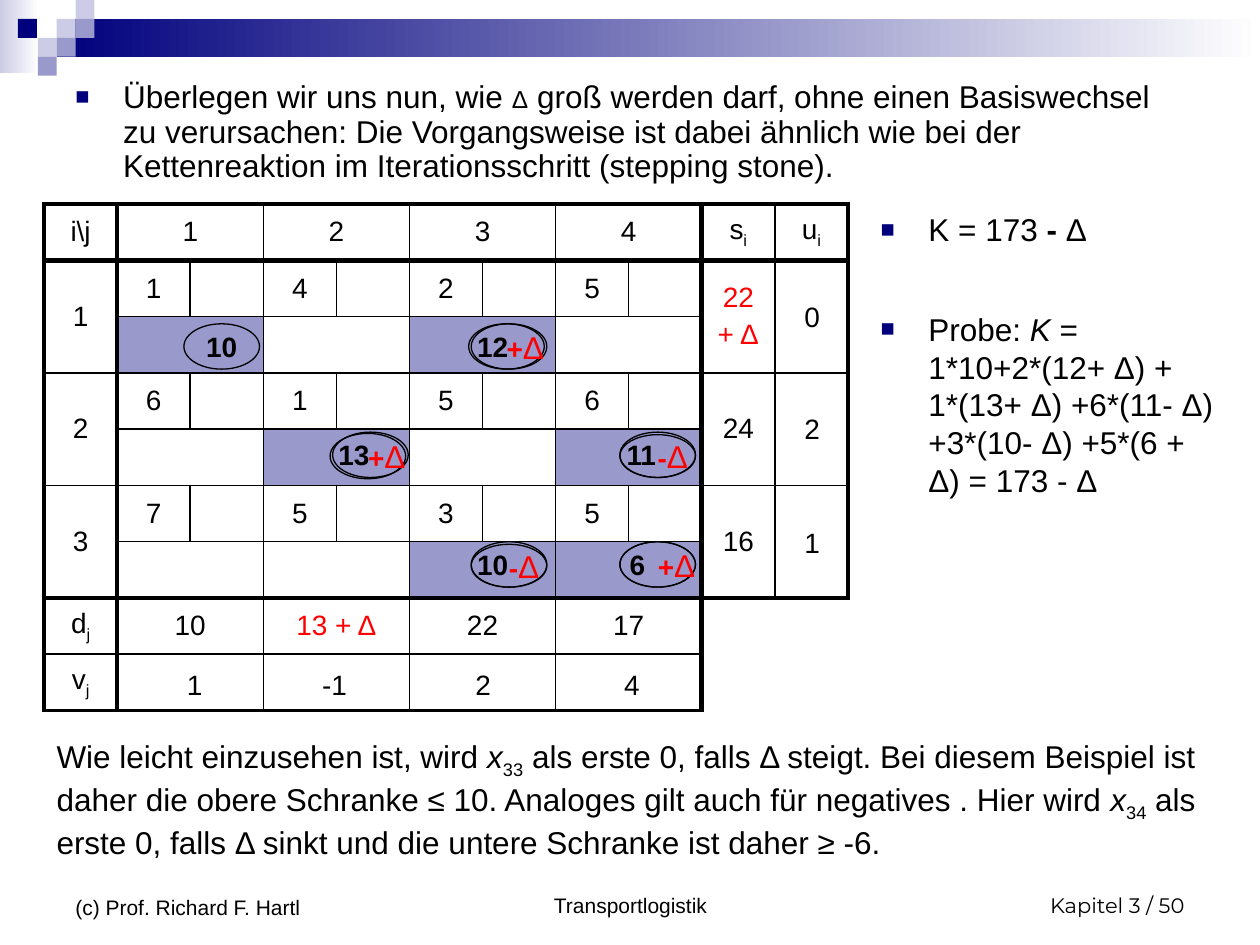
from lxml import etree
from pptx import Presentation
from pptx import util as u
from pptx.dml import color
from pptx.enum import shapes, text
from pptx.oxml import ns

BLACK, RED, NAVY, LILAC, PALE = "000000", "FF0000", "00007D", "9999CC", "CCCCE6"
CENTER, MIDDLE = text.PP_ALIGN.CENTER, text.MSO_ANCHOR.MIDDLE
SUB, ITALIC = {"baseline": -25000}, {"italic": True}
LABELS = {
    (0, 0): "i\\j", (0, 9): [("s", {}), ("i", SUB)], (0, 10): [("u", {}), ("i", SUB)],
    (7, 0): [("d", {}), ("j", SUB)], (8, 0): [("v", {}), ("j", SUB)],
    (3, 9): "24", (5, 9): "16",
}
COSTS = [[1, 4, 2, 5], [6, 1, 5, 6], [7, 5, 3, 5]]
DEMANDS = ["10", "13 + Δ", "22", "17"]
BASIS = {(2, 1), (2, 5), (4, 3), (4, 7), (6, 5), (6, 7)}
COLUMN_LINES = {0: 2.25, 1: 3, 9: 3, 11: 2.25}
ROW_LINES = {0: 2.25, 1: 3, 7: 3, 9: 2.25}


def rgb(value):
    """Turn a hex string into a colour."""
    return color.RGBColor.from_string(value)


def assign(target, values):
    """Set each named attribute of the target."""
    for name, value in values.items():
        setattr(target, name, value)


def write(paragraph, runs, size=16, ink=BLACK, face="Arial", align=None, bold=False):
    """Write a string or a list of (words, overrides) into a paragraph."""
    if align is not None:
        paragraph.alignment = align
    for words, overrides in [(runs, {})] if isinstance(runs, str) else runs:
        look = {"size": size, "ink": ink, "name": face, "bold": bold, **overrides}
        baseline = look.pop("baseline", None)
        run = paragraph.add_run()
        run.text = words
        run.font.color.rgb = rgb(look.pop("ink"))
        look["size"] = u.Pt(look["size"])
        assign(run.font, look)
        if baseline:
            run._r.get_or_add_rPr().set("baseline", str(baseline))


def add_bullet(paragraph):
    """Give a paragraph a hanging square bullet."""
    props = paragraph._p.get_or_add_pPr()
    indent = u.Inches(0.38)
    props.set("marL", str(indent))
    props.set("indent", str(-indent))
    tint = etree.SubElement(props, ns.qn("a:buClr"))
    etree.SubElement(tint, ns.qn("a:srgbClr"), val=NAVY)
    etree.SubElement(props, ns.qn("a:buSzPct"), val="75000")
    etree.SubElement(props, ns.qn("a:buFont"), typeface="Arial")
    etree.SubElement(props, ns.qn("a:buChar"), char="■")


def add_words(slide, box, runs, anchor=text.MSO_ANCHOR.TOP, bullet=False, spacing=None, **look):
    """Place a wrapped text box."""
    frame = slide.shapes.add_textbox(*map(u.Inches, box)).text_frame
    assign(frame, {"word_wrap": True, "vertical_anchor": anchor})
    paragraph = frame.paragraphs[0]
    if spacing:
        paragraph.line_spacing = spacing
    if bullet:
        add_bullet(paragraph)
    write(paragraph, runs, **look)


def add_header(slide, box):
    """Draw the fading bands and the mosaic of squares."""
    left, top, width, height = box
    unit = 0.15

    def block(x, y, w, h, fill, fade=False):
        rect = slide.shapes.add_shape(
            shapes.MSO_SHAPE.RECTANGLE, *map(u.Inches, (left + x, top + y, w, h)))
        rect.shadow.inherit = False
        rect.line.fill.background()
        if fade:
            rect.fill.gradient()
            rect.fill.gradient_angle = 0
            for stop, tint in zip(rect.fill.gradient_stops, (fill, "FFFFFF")):
                stop.color.rgb = rgb(tint)
        else:
            rect.fill.solid()
            rect.fill.fore_color.rgb = rgb(fill)

    block(0, 0, 0.31, height, PALE, True)
    block(3 * unit, unit, width - 3 * unit, 2 * unit, NAVY, True)
    for column, row, fill in [(3, 1, PALE), (4, 0, PALE), (4, 1, LILAC), (2, 2, PALE),
                              (0.95, 1, NAVY), (3, 2, LILAC), (2, 3, LILAC)]:
        block(column * unit, row * unit, unit, unit, fill)


def add_border(cell, side, width):
    """Draw one cell edge, or clear it when the width is zero."""
    line = etree.SubElement(cell._tc.get_or_add_tcPr(), ns.qn("a:ln" + side), w=str(u.Pt(width)))
    if width:
        fill = etree.SubElement(line, ns.qn("a:solidFill"))
        etree.SubElement(fill, ns.qn("a:srgbClr"), val=BLACK)
    else:
        etree.SubElement(line, ns.qn("a:noFill"))


def add_block(table, row, column, rows, columns):
    """Merge a block of cells, draw its outer edges and fill it."""
    if rows * columns > 1:
        table.cell(row, column).merge(table.cell(row + rows - 1, column + columns - 1))
    for r in range(row, row + rows):
        for c in range(column, column + columns):
            outside = r >= 7 and c >= 9
            upper_gap = r == 1 and c in (2, 4, 6, 8)
            edges = {
                "L": COLUMN_LINES.get(c, 1) if c == column and not (outside and c > 9) else 0,
                "R": COLUMN_LINES.get(c + 1, 1) if c == column + columns - 1 and not outside else 0,
                "T": ROW_LINES.get(r, 1) if r == row and not (outside and r > 7)
                and not (r == 2 and columns == 2) else 0,
                "B": ROW_LINES.get(r + 1, 1) if r == row + rows - 1
                and not (outside or upper_gap) else 0,
            }
            cell = table.cell(r, c)
            for side, width in edges.items():
                add_border(cell, side, width)
            if (row, column) in BASIS:
                cell.fill.solid()
                cell.fill.fore_color.rgb = rgb(LILAC)
            else:
                cell.fill.background()


def add_transport_table(slide, box):
    """Build the transport tableau with costs, supplies and demands."""
    table = slide.shapes.add_table(9, 11, *map(u.Inches, box)).table
    assign(table, {"first_row": False, "horz_banding": False})
    for column in table.columns:
        column.width = u.Inches(box[2] / 11)
    for row in table.rows:
        row.height = u.Inches(box[3] / 9)
    for row in (0, 7, 8):
        for column in (0, 9, 10):
            add_block(table, row, column, 1, 1)
        for column in range(1, 9, 2):
            add_block(table, row, column, 1, 2)
    for row in (1, 3, 5):
        for column in (0, 9, 10):
            add_block(table, row, column, 2, 1)
        for column in range(1, 9):
            add_block(table, row, column, 1, 1)
        for column in range(1, 9, 2):
            add_block(table, row + 1, column, 1, 2)

    labels = dict(LABELS)
    for i, costs in enumerate(COSTS):
        labels[2 * i + 1, 0] = str(i + 1)
        for j, cost in enumerate(costs):
            labels[2 * i + 1, 2 * j + 1] = str(cost)
    for j, demand in enumerate(DEMANDS):
        labels[0, 2 * j + 1] = str(j + 1)
        labels[7, 2 * j + 1] = demand
    for place, runs in labels.items():
        cell = table.cell(*place)
        cell.vertical_anchor = MIDDLE
        write(cell.text_frame.paragraphs[0], runs, align=CENTER,
              ink=RED if place == (7, 3) else BLACK)
    supply = table.cell(1, 9)
    supply.vertical_anchor = MIDDLE
    write(supply.text_frame.paragraphs[0], "22", align=CENTER, ink=RED)
    change = supply.text_frame.add_paragraph()
    change.space_before = u.Pt(3.2)
    write(change, "+ Δ", align=CENTER, ink=RED)


def add_oval(slide, box, runs, left=0, right=0):
    """Ring a value, with side insets shifting it off centre."""
    oval = slide.shapes.add_shape(shapes.MSO_SHAPE.OVAL, *map(u.Inches, box))
    oval.shadow.inherit = False
    oval.fill.background()
    oval.line.color.rgb = rgb(BLACK)
    oval.line.width = u.Pt(0.75)
    assign(oval.text_frame, {
        "word_wrap": False, "vertical_anchor": MIDDLE,
        "margin_left": u.Inches(left), "margin_right": u.Inches(right)})
    write(oval.text_frame.paragraphs[0], runs, align=CENTER, bold=True)


def add_basis_values(slide):
    """Ring the basis values and their changes."""
    for x, y, value, shift in [(1.46, 2.57, "10", 0), (4.92, 4.3, "6", 0.32), (3.74, 4.3, "10", 0.26),
                               (4.92, 3.43, "11", 0.26), (3.74, 2.57, "12", 0.26),
                               (2.64, 3.43, "13", 0.26)]:
        add_oval(slide, (x, y, 0.6, 0.36), value, right=shift)
    for x, y, sign in [(2.62, 3.44, "+"), (4.92, 3.45, "-"), (4.92, 4.3, "+"),
                       (3.72, 2.57, "+"), (3.74, 4.32, "-")]:
        height, shift = (0.36, 0.3) if sign == "+" else (0.34, 0.24)
        change = [(sign, {"ink": RED}), ("Δ", {"ink": RED, "size": 18, "bold": False})]
        add_oval(slide, (x, y, 0.6, height), change, left=shift)


def add_duals(slide):
    """Place the dual values under the columns and beside the rows."""
    for x, value in zip((0.98, 2.09, 3.27, 4.45), ("1", "-1", "2", "4")):
        add_words(slide, (x, 5.25, 1.13, 0.37), value, align=CENTER)
    for y, value in zip((2.33, 3.22, 4.12), "021"):
        add_words(slide, (6.18, y, 0.53, 0.37), value, align=CENTER)


def add_remarks(slide):
    """Place the introduction, the check and the conclusion."""
    add_words(slide, (0.5, 0.6, 9, 0.94), [
        ("Überlegen wir uns nun, wie ", {}), ("Δ", {"size": 14}),
        (" groß werden darf, ohne einen Basiswechsel zu verursachen: Die Vorgangsweise ist dabei "
         "ähnlich wie bei der Kettenreaktion im Iterationsschritt (stepping stone).", {})],
        bullet=True, spacing=0.9, size=18)
    add_words(slide, (6.89, 1.62, 2.85, 0.55),
              [("K = 173 ", {}), ("- ", {"bold": True}), ("Δ", {})], bullet=True, size=18)
    add_words(slide, (6.89, 2.41, 2.91, 2.52), [
        ("Probe: ", {}), ("K", ITALIC),
        (" = 1*10+2*(12+ Δ) + 1*(13+ Δ) +6*(11- Δ) +3*(10- Δ) +5*(6 + Δ) = 173 - Δ", {})],
        bullet=True, size=18)
    add_words(slide, (0.35, 5.8, 9.65, 1), [
        ("Wie leicht einzusehen ist, wird ", {}), ("x", ITALIC), ("33", SUB),
        (" als erste 0, falls Δ steigt. Bei diesem Beispiel ist daher die obere Schranke ≤ 10. "
         "Analoges gilt auch für negatives . Hier wird ", {}), ("x", ITALIC), ("34", SUB),
        (" als erste 0, falls Δ sinkt und die untere Schranke ist daher ≥ -6.", {})], size=18)


def add_footer(slide, top):
    """Place author, course and page along the bottom."""
    look = {"anchor": text.MSO_ANCHOR.BOTTOM, "size": 12}
    add_words(slide, (3.42, top, 3.17, 0.5), "Transportlogistik", align=CENTER, **look)
    add_words(slide, (7.17, top, 2.33, 0.5), "Kapitel 3 / 50", face="Montserrat",
              align=text.PP_ALIGN.RIGHT, **look)
    add_words(slide, (0.5, top, 2.33, 0.52), "(c) Prof. Richard F. Hartl", **look)


def main():
    """Build and save the slide."""
    deck = Presentation()
    assign(deck, {"slide_width": u.Inches(10), "slide_height": u.Inches(7.5)})
    slide = deck.slides.add_slide(deck.slide_layouts[6])
    add_header(slide, (0, 0, 10, 0.58))
    add_footer(slide, 6.83)
    add_transport_table(slide, (0.35, 1.62, 6.38, 4.02))
    add_duals(slide)
    add_basis_values(slide)
    add_remarks(slide)
    deck.save("out.pptx")


if __name__ == "__main__":
    main()
